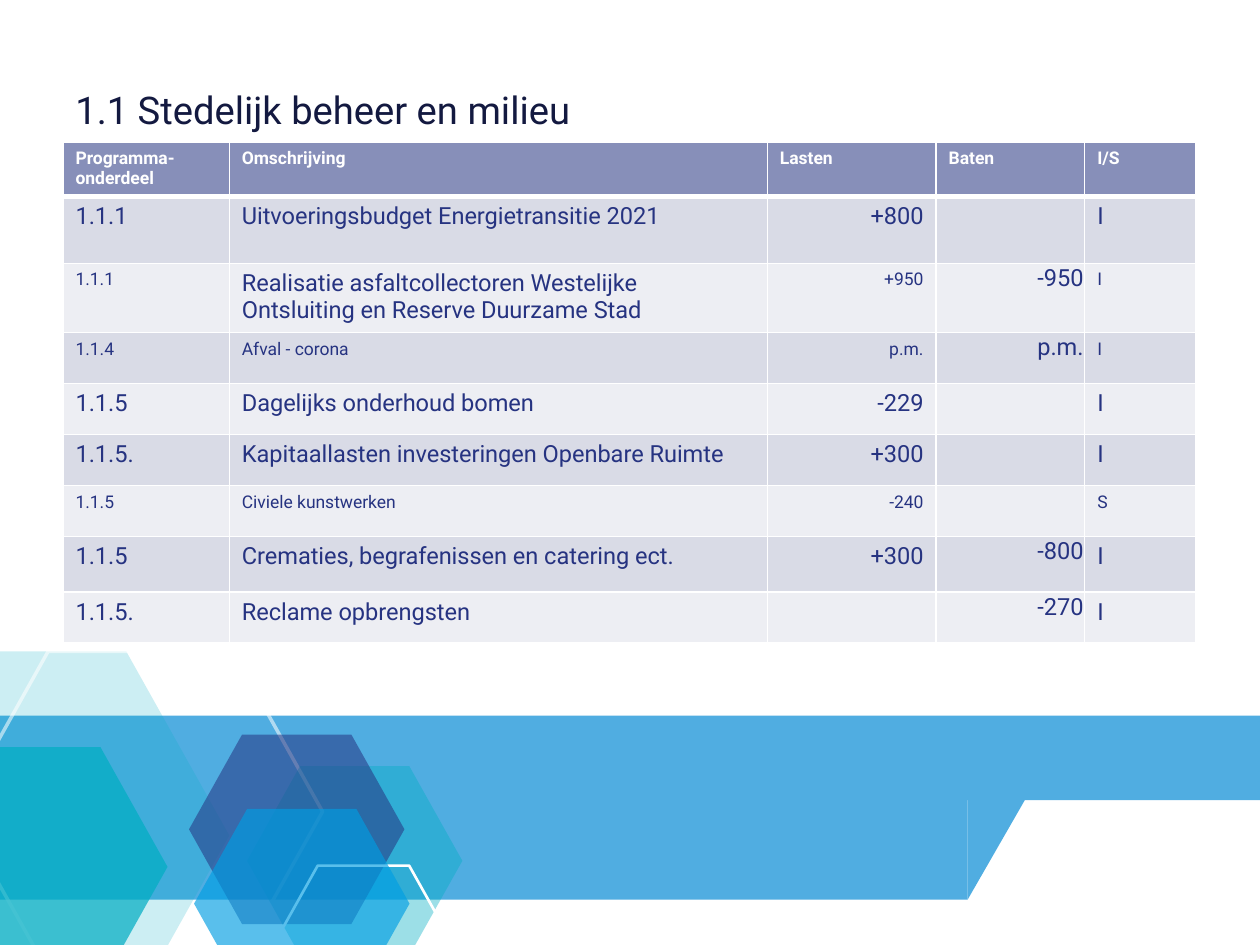
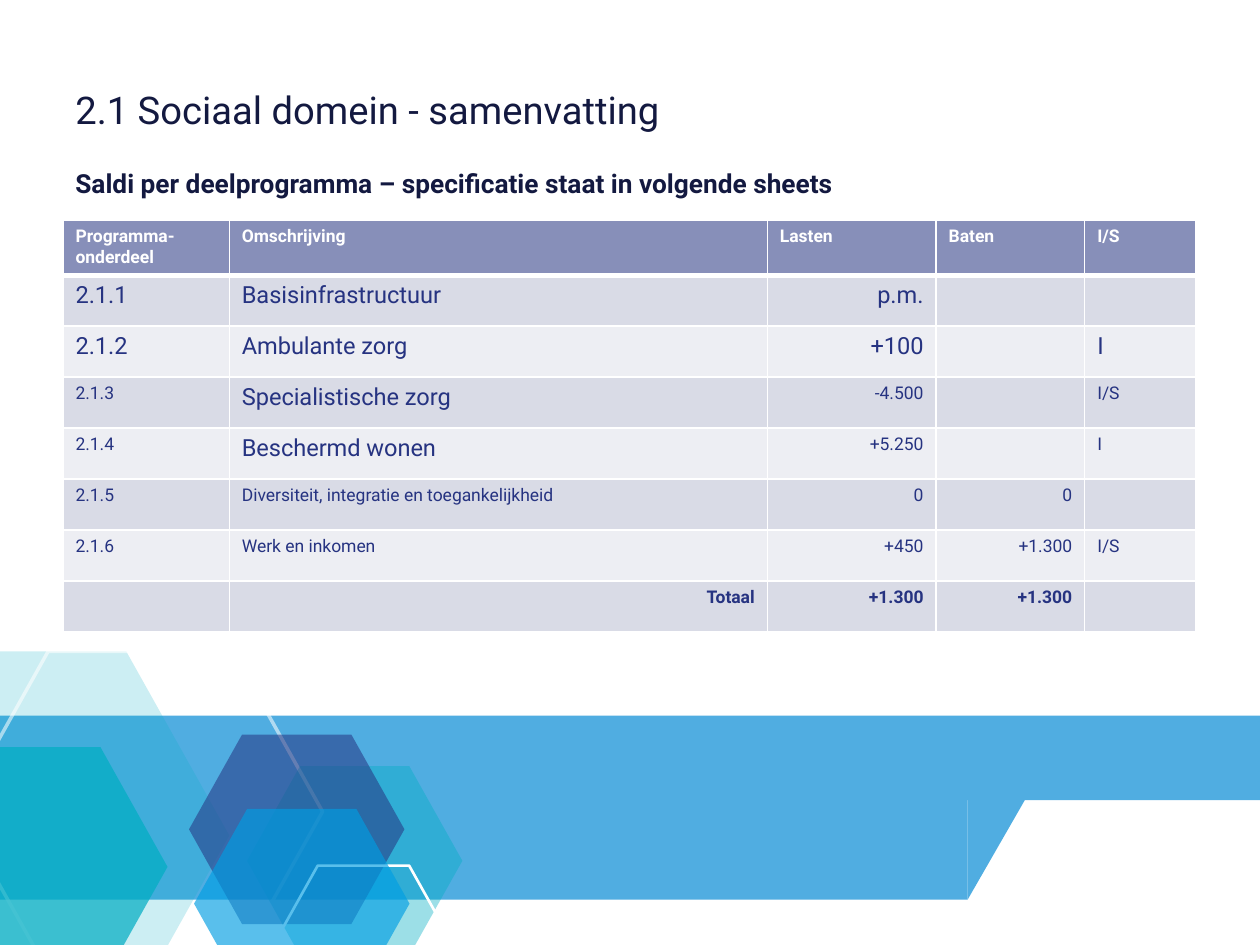
from dataclasses import dataclass
from lxml.etree import SubElement as Sub
from pptx import Presentation
from pptx.dml.color import RGBColor as Rgb
from pptx.enum.shapes import MSO_SHAPE as Kind
from pptx.enum.text import MSO_ANCHOR as Anchor, PP_ALIGN as Align
from pptx.oxml.ns import qn
from pptx.util import Emu, Inches, Pt


@dataclass(frozen=True)
class Theme:
    """Colours, font and type sizes of the deck."""
    font: str = "Roboto"
    white: str = "FFFFFF"
    ink: str = "131940"
    navy: str = "263381"
    band: str = "50ADE1"
    teal: str = "00ADC3"
    sky: str = "009EE3"
    head: str = "878FB9"
    odd: str = "D9DBE6"
    even: str = "EDEEF3"
    title: float = 21.8
    lead: float = 15
    big: float = 13.5
    small: float = 10


@dataclass(frozen=True)
class Box:
    """A place on the grid in columns and rows."""
    x: float
    y: float
    w: float
    h: float


@dataclass(frozen=True)
class Hex:
    """A footer hexagon, outlined when a line width is given."""
    x: float
    y: float
    w: float
    color: str
    alpha: int
    line: float = 0


@dataclass(frozen=True)
class Row:
    """A table row, with the columns set in large type."""
    cells: tuple[str, ...]
    big: tuple[int, ...] = ()
    high: float = 4.05
    bold: bool = False


@dataclass(frozen=True)
class Sheet:
    """The content of one slide."""
    title: str
    top: float
    rows: tuple[Row, ...]
    lead: str = ""
    tight: bool = False


LOOK = Theme()
WIDE, HIGH = Inches(10), Inches(7.5)
UNIT = WIDE / 100
RATIO = 0.88
COLS = (13.2, 42.7, 13.4, 11.8, 8.8)
LASTEN, BATEN = 2, 3
ALL = (0, 1, 2, 3, 4)
HEAD = Row(("Programma-onderdeel", "Omschrijving", "Lasten", "Baten", "I/S"), high=4.1, bold=True)

BANDS = (
    (Kind.RECTANGLE, Box(0, 56.8, 100, 6.7)),
    (Kind.RECTANGLE, Box(0, 62.7, 76.8, 8.7)),
)
HEXES = (
    Hex(-15, 51.7, 33.2, LOOK.teal, 20),
    Hex(-3.3, 51.7, 28.9, LOOK.white, 55, 2),
    Hex(19.6, 60.8, 17.1, LOOK.teal, 39),
    Hex(15, 58.3, 17.1, LOOK.navy, 55),
    Hex(21.7, 68.7, 14.3, LOOK.white, 100, 1.5),
    Hex(15.4, 64.2, 17.1, LOOK.sky, 65),
    Hex(-8.3, 59.3, 21.6, LOOK.teal, 71),
)
SHEETS = (
    Sheet("1.1 Stedelijk beheer en milieu", 11.25, (
        Row(("1.1.1", "Uitvoeringsbudget Energietransitie 2021", "+800", "", "I"), ALL, 5.3),
        Row(("1.1.1", "Realisatie asfaltcollectoren Westelijke Ontsluiting en Reserve Duurzame Stad",
             "+950", "-950", "I"), (1, 3), 5.4),
        Row(("1.1.4", "Afval - corona", "p.m.", "p.m.", "I"), (3,)),
        Row(("1.1.5", "Dagelijks onderhoud bomen", "-229", "", "I"), ALL),
        Row(("1.1.5.", "Kapitaallasten investeringen Openbare Ruimte", "+300", "", "I"), ALL),
        Row(("1.1.5", "Civiele kunstwerken", "-240", "", "S")),
        Row(("1.1.5", "Crematies, begrafenissen en catering ect.", "+300", "-800", "I"), ALL, 4.4),
        Row(("1.1.5.", "Reclame opbrengsten", "", "-270", "I"), ALL),
    ), tight=True),
    Sheet("2.1 Sociaal domein - samenvatting", 17.5, (
        Row(("2.1.1", "Basisinfrastructuur", "p.m.", "", ""), ALL),
        Row(("2.1.2", "Ambulante zorg", "+100", "", "I"), ALL),
        Row(("2.1.3", "Specialistische zorg", "-4.500", "", "I/S"), (1,)),
        Row(("2.1.4", "Beschermd wonen", "+5.250", "", "I"), (1,)),
        Row(("2.1.5", "Diversiteit, integratie en toegankelijkheid", "0", "0", "")),
        Row(("2.1.6", "Werk en inkomen", "+450", "+1.300", "I/S")),
        Row(("", "Totaal", "+1.300", "+1.300", ""), bold=True),
    ), "Saldi per deelprogramma – specificatie staat in volgende sheets"),
)


def span(n: float) -> Emu:
    """Turn grid units into a length."""
    return Emu(round(n * UNIT))


def place(box: Box) -> tuple[Emu, ...]:
    """Turn a box into left, top, width and height."""
    return tuple(span(n) for n in (box.x, box.y, box.w, box.h))


def fade(shape, alpha: int) -> None:
    """Set the opacity of the one colour of a shape."""
    for node in shape.element.spPr.iter(qn("a:srgbClr")):
        Sub(node, qn("a:alpha"), val=str(alpha * 1000))


def draw(slide, kind: Kind, box: Box, color: str, line: float = 0):
    """Add a filled or an outlined shape."""
    shape = slide.shapes.add_shape(kind, *place(box))
    shape.shadow.inherit = False
    if line:
        shape.fill.background()
        shape.line.color.rgb = Rgb.from_string(color)
        shape.line.width = Pt(line)
    else:
        shape.fill.solid()
        shape.fill.fore_color.rgb = Rgb.from_string(color)
        shape.line.fill.background()
    return shape


def foot(slide) -> None:
    """Draw the bands and hexagons at the bottom."""
    for kind, box in BANDS:
        draw(slide, kind, box, LOOK.band)
    for cell in HEXES:
        box = Box(cell.x, cell.y, cell.w, cell.w * RATIO)
        shape = draw(slide, Kind.HEXAGON, box, cell.color, cell.line)
        shape.adjustments[0] = 0.28
        if cell.alpha < 100:
            fade(shape, cell.alpha)
    wedge = draw(slide, Kind.RIGHT_TRIANGLE, Box(76.8, 62.7, 5.0, 8.7), LOOK.band)
    wedge.rotation = 180
    wedge.element.spPr.find(qn("a:xfrm")).set("flipH", "1")


def style(par, size: float, color: str, bold: bool = False) -> None:
    """Set the font of a paragraph."""
    font = par.font
    font.name, font.size, font.bold = LOOK.font, Pt(size), bold
    font.color.rgb = Rgb.from_string(color)


def label(slide, box: Box, text: str, size: float, bold: bool, anchor: Anchor) -> None:
    """Add a line of heading text."""
    frame = slide.shapes.add_textbox(*place(box)).text_frame
    frame.word_wrap = True
    frame.vertical_anchor = anchor
    par = frame.paragraphs[0]
    par.text = text
    par.line_spacing = 1.1
    style(par, size, LOOK.ink, bold)


def edge(cell, top: float, low: float) -> None:
    """Give a cell its white borders."""
    props = cell._tc.get_or_add_tcPr()
    for side, width in (("L", 1), ("R", 1), ("T", top), ("B", low)):
        line = Sub(props, qn(f"a:ln{side}"), w=str(Pt(width)))
        fill = Sub(line, qn("a:solidFill"))
        Sub(fill, qn("a:srgbClr"), val=LOOK.white)


def write(cell, row: Row, num: int, col: int, tight: bool) -> None:
    """Fill in one table cell."""
    head = num == 0
    edge(cell, 3 if num == 1 else 1, 3 if head else 1)
    shade = LOOK.head if head else LOOK.odd if num % 2 else LOOK.even
    cell.fill.solid()
    cell.fill.fore_color.rgb = Rgb.from_string(shade)
    text = row.cells[col]
    par = cell.text_frame.paragraphs[0]
    par.text = text
    right = not head and (col in (LASTEN, BATEN) or text == "Totaal")
    par.alignment = Align.RIGHT if right else Align.LEFT
    size = LOOK.big if col in row.big else LOOK.small
    style(par, size, LOOK.white if head else LOOK.navy, row.bold)
    if tight and text and col == BATEN and not head:
        cell.margin_left = cell.margin_right = cell.margin_top = span(0.1)
        cell.margin_bottom = 0


def grid(slide, sheet: Sheet) -> None:
    """Add the budget table."""
    rows = (HEAD, *sheet.rows)
    box = Box(5, sheet.top, sum(COLS), sum(row.high for row in rows))
    table = slide.shapes.add_table(len(rows), len(COLS), *place(box)).table
    for col, width in enumerate(COLS):
        table.columns[col].width = span(width)
    for num, row in enumerate(rows):
        table.rows[num].height = span(row.high)
        for col in range(len(COLS)):
            write(table.cell(num, col), row, num, col, sheet.tight)


def main() -> None:
    """Build and save the deck."""
    deck = Presentation()
    deck.slide_width, deck.slide_height = WIDE, HIGH
    for sheet in SHEETS:
        slide = deck.slides.add_slide(deck.slide_layouts[6])
        foot(slide)
        if sheet.lead:
            label(slide, Box(5, 12.5, 90, 5), sheet.lead, LOOK.lead, True, Anchor.TOP)
        label(slide, Box(5, 5.2, 90, 6.5), sheet.title, LOOK.title, False, Anchor.MIDDLE)
        grid(slide, sheet)
    deck.save("out.pptx")


if __name__ == "__main__":
    main()
